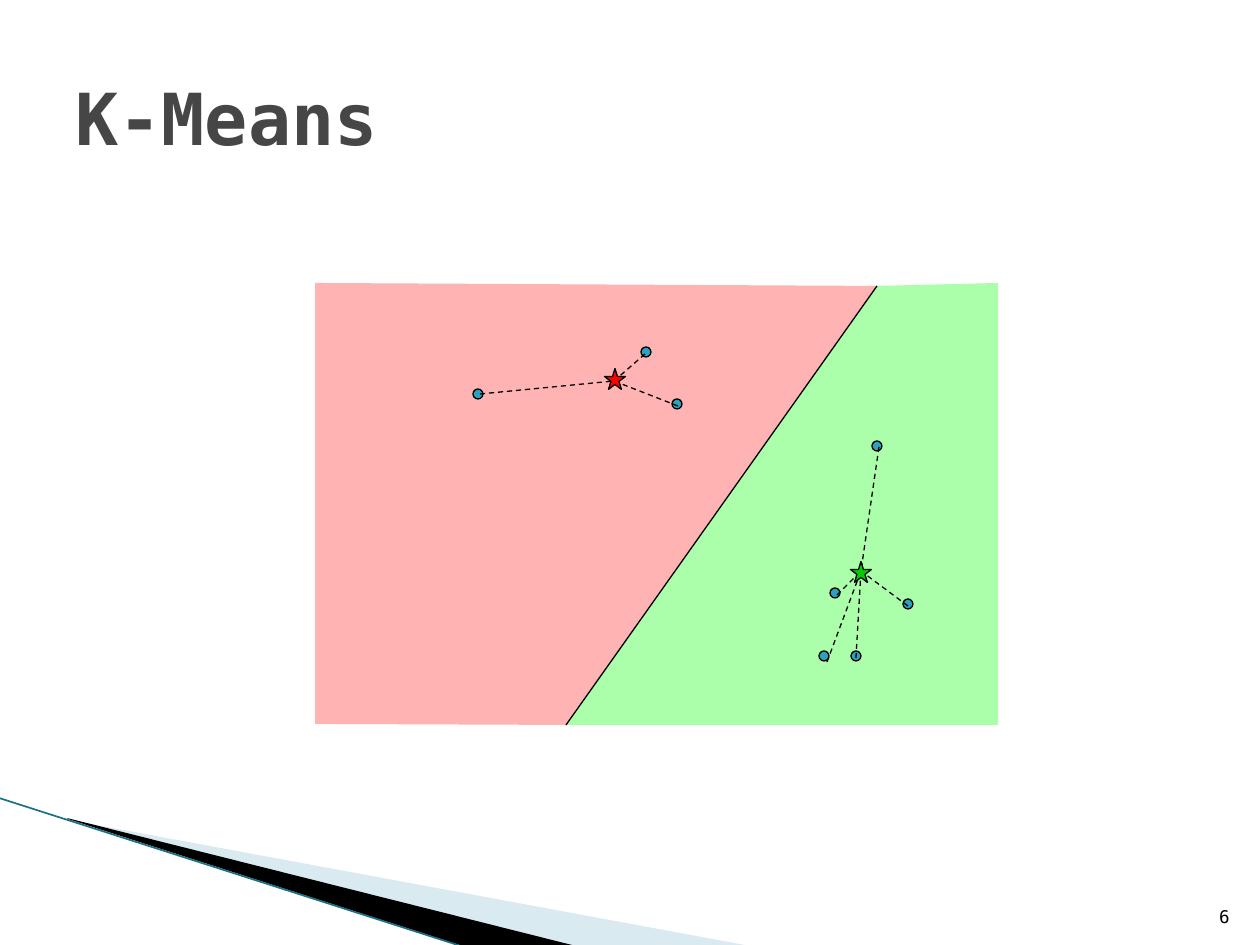
import pptx
import pptx.dml.color
import pptx.enum.dml
import pptx.enum.shapes
import pptx.enum.text
import pptx.oxml.ns
import pptx.util
from lxml import etree

SCALE = 914400 / 126  # EMU in one px
FONT = "DejaVu Sans Mono"
COLORS = {
    "title": "464646",
    "black": "000000",
    "pale_wedge": "A0CBDC",
    "wedge_edge": "1A7084",
    "red_region": "FFB3B3",
    "green_region": "ABFFAB",
    "red_star": "FF0000",
    "green_star": "00CC00",
    "point": "2DA2BF",
}
DOT_SIZE = 10
STAR_SIZE = 21

BOUNDARY = [(566, 725), (877, 286)]
RED_REGION = BOUNDARY + [(315, 283), (315, 724)]
GREEN_REGION = BOUNDARY + [(998, 283), (998, 725)]

# Each cluster: star colour, centroid, and (point, end of its dashed line) pairs.
CLUSTERS = [
    ("red_star", (615, 379), (614, 381), [
        ((478, 394), (480, 394)),
        ((646, 352), (645, 354)),
        ((677, 404), (678, 406)),
    ]),
    ("green_star", (861, 572), (861, 571), [
        ((877, 446), (879, 447)),
        ((835, 593), (837, 595)),
        ((908, 604), (908, 606)),
        ((824, 656), (827, 662)),
        ((856, 656), (856, 658)),
    ]),
]


def px(length):
    return pptx.util.Emu(round(length * SCALE))


def rgb(name):
    return pptx.dml.color.RGBColor.from_string(COLORS[name])


def add_text(slide, text, box, *, size, color, bold=False,
             align=pptx.enum.text.PP_ALIGN.LEFT,
             anchor=pptx.enum.text.MSO_ANCHOR.MIDDLE):
    frame = slide.shapes.add_textbox(*map(px, box)).text_frame
    frame.word_wrap = True
    frame.vertical_anchor = anchor
    paragraph = frame.paragraphs[0]
    paragraph.text = text
    paragraph.alignment = align
    font = paragraph.font
    font.name = FONT
    font.size = pptx.util.Pt(size)
    font.bold = bold
    font.color.rgb = rgb(color)


def add_polygon(slide, points, color, opacity=100):
    builder = slide.shapes.build_freeform(*points[0], scale=SCALE)
    builder.add_line_segments(points[1:], close=True)
    shape = builder.convert_to_shape()
    shape.shadow.inherit = False
    shape.fill.solid()
    shape.fill.fore_color.rgb = rgb(color)
    shape.line.fill.background()
    if opacity < 100:
        fill_color = shape.fill._xPr.find(".//" + pptx.oxml.ns.qn("a:srgbClr"))
        alpha = etree.SubElement(fill_color, pptx.oxml.ns.qn("a:alpha"))
        alpha.set("val", str(opacity * 1000))


def add_line(slide, start, end, color="black", width=0.75, dashed=False):
    connector = slide.shapes.add_connector(
        pptx.enum.shapes.MSO_CONNECTOR.STRAIGHT, *map(px, start + end))
    connector.line.color.rgb = rgb(color)
    connector.line.width = pptx.util.Pt(width)
    if dashed:
        connector.line.dash_style = pptx.enum.dml.MSO_LINE.DASH
    etree.SubElement(connector._element.spPr, pptx.oxml.ns.qn("a:effectLst"))


def add_marker(slide, kind, center, size, color):
    """Add an outlined preset shape centred on a point."""
    left, top = (value - size / 2 for value in center)
    shape = slide.shapes.add_shape(kind, px(left), px(top), px(size), px(size))
    shape.shadow.inherit = False
    shape.fill.solid()
    shape.fill.fore_color.rgb = rgb(color)
    shape.line.color.rgb = rgb("black")
    shape.line.width = pptx.util.Pt(0.75)


def add_corner_wedges(slide):
    add_polygon(slide, [(69, 820), (750, 946), (575, 946), (69, 819)],
                "pale_wedge", opacity=40)
    add_polygon(slide, [(67, 818), (576, 946), (469, 948), (68, 819)], "black")
    add_line(slide, (-1, 798), (467, 948), "wedge_edge", width=0.95)


def add_cluster(slide, star_color, centroid, hub, members):
    kinds = pptx.enum.shapes.MSO_SHAPE
    for point, line_end in members:
        add_marker(slide, kinds.OVAL, point, DOT_SIZE, "point")
        add_line(slide, line_end, hub, dashed=True)
    add_marker(slide, kinds.STAR_5_POINT, centroid, STAR_SIZE, star_color)


def main():
    presentation = pptx.Presentation()
    presentation.slide_width = px(1260)
    presentation.slide_height = px(945)
    slide = presentation.slides.add_slide(presentation.slide_layouts[6])

    add_corner_wedges(slide)
    add_text(slide, "K-Means", (63, 38, 1134, 158),
             size=41, color="title", bold=True)
    add_polygon(slide, RED_REGION, "red_region")
    add_polygon(slide, GREEN_REGION, "green_region")
    add_line(slide, *BOUNDARY)
    for cluster in CLUSTERS:
        add_cluster(slide, *cluster)
    add_text(slide, "6", (1192, 883, 50, 50), size=10, color="black",
             align=pptx.enum.text.PP_ALIGN.RIGHT,
             anchor=pptx.enum.text.MSO_ANCHOR.BOTTOM)

    presentation.save("out.pptx")


if __name__ == "__main__":
    main()
